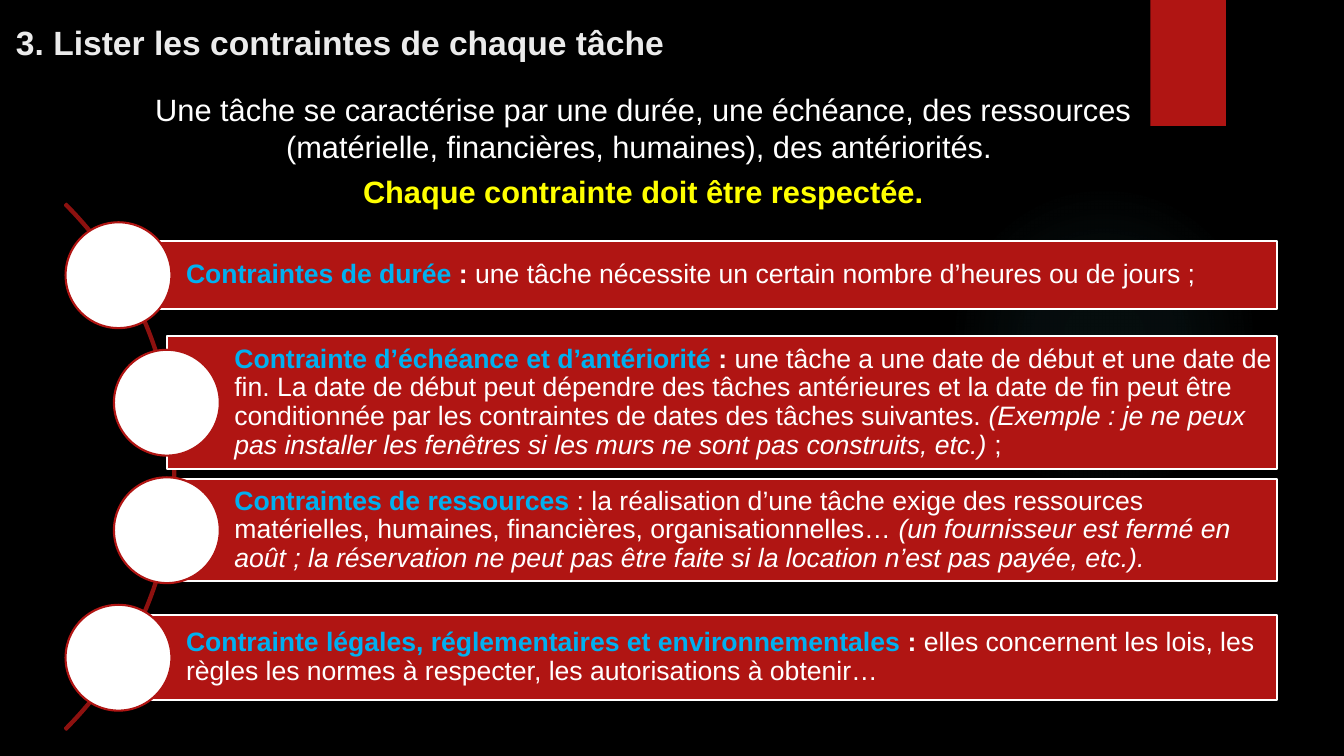
import pptx
import pptx.dml.color
import pptx.enum.shapes
import pptx.enum.text
import pptx.oxml
import pptx.oxml.ns
import pptx.util
from dataclasses import dataclass

Inches = pptx.util.Inches
SHAPE = pptx.enum.shapes.MSO_SHAPE
ANCHOR = pptx.enum.text.MSO_ANCHOR
ALIGN = pptx.enum.text.PP_ALIGN


@dataclass(frozen=True)
class Theme:
    background: str = "000000"
    red: str = "B01513"
    dark_red: str = "8D110F"
    white: str = "FFFFFF"
    title: str = "EBEBEB"
    yellow: str = "FFFF00"
    blue: str = "00B0F0"
    glow: str = "50B9C1"
    font: str = "Arial"
    title_size: int = 24
    intro_size: int = 22
    bar_size: int = 19
    line: float = 1.5


THEME = Theme()

CIRCLE = 1.05
FIRST_CENTER, CENTER_STEP = 2.73, 1.265
BAR_RIGHT = 12.67

# Circle left, bar height, then heading, colon, explanation, example, ending
CONSTRAINTS = [
    (0.65, 0.68, "Contraintes de durée ", ": ",
     "une tâche nécessite un certain nombre d’heures ou de jours ;", "", ""),
    (1.13, 1.32, "Contrainte d’échéance et d’antériorité ", ":",
     " une tâche a une date de début et une date de fin. La date de début peut "
     "dépendre des tâches antérieures et la date de fin peut être conditionnée "
     "par les contraintes de dates des tâches suivantes. ",
     "(Exemple : je ne peux pas installer les fenêtres si les murs ne sont pas "
     "construits, etc.)", " ;"),
    (1.13, 1.01, "Contraintes de ressources ", "",
     ": la réalisation d’une tâche exige des ressources matérielles, humaines, "
     "financières, organisationnelles… ",
     "(un fournisseur est fermé en août ; la réservation ne peut pas être faite "
     "si la location n’est pas payée, etc.).", ""),
    (0.65, 0.84, "Contrainte légales, réglementaires et environnementales ", ": ",
     "elles concernent les lois, les règles les normes à respecter, les "
     "autorisations à obtenir…", "", ""),
]


def rgb(color):
    return pptx.dml.color.RGBColor.from_string(color)


def add_run(p, text, size, color=THEME.white, bold=False, italic=False):
    r = p.add_run()
    r.text = text
    r.font.name = THEME.font
    r.font.size = pptx.util.Pt(size)
    r.font.bold = bold
    r.font.italic = italic
    r.font.color.rgb = rgb(color)


def add_shape(s, kind, left, top, width, height, fill=None, line=None):
    sp = s.shapes.add_shape(kind, Inches(left), Inches(top),
                            Inches(width), Inches(height))
    sp.shadow.inherit = False
    if fill:
        sp.fill.solid()
        sp.fill.fore_color.rgb = rgb(fill)
    else:
        sp.fill.background()
    if line:
        sp.line.color.rgb = rgb(line)
        sp.line.width = pptx.util.Pt(THEME.line)
    else:
        sp.line.fill.background()
    return sp


def add_text_box(s, left, top, width, height, anchor=ANCHOR.TOP):
    box = s.shapes.add_textbox(Inches(left), Inches(top),
                               Inches(width), Inches(height))
    tf = box.text_frame
    tf.word_wrap = True
    tf.vertical_anchor = anchor
    return tf


def add_glow(s):
    """Faint radial light that fades out towards its edge."""
    sp = add_shape(s, SHAPE.OVAL, 9.41, 1.83, 3.08, 3.08)
    stops = "".join(
        f'<a:gs pos="{pos}000"><a:srgbClr val="{THEME.glow}">'
        f'<a:alpha val="{alpha}000"/></a:srgbClr></a:gs>'
        for pos, alpha in [(0, 7), (36, 6), (69, 0)])
    gradient = pptx.oxml.parse_xml(
        f'<a:gradFill {pptx.oxml.ns.nsdecls("a")}><a:gsLst>{stops}</a:gsLst>'
        '<a:path path="circle"><a:fillToRect l="50000" t="50000" r="50000" '
        'b="50000"/></a:path></a:gradFill>')
    no_fill = sp.element.spPr.find(pptx.oxml.ns.qn("a:noFill"))
    sp.element.spPr.replace(no_fill, gradient)


def add_intro(s):
    tf = add_text_box(s, 0.82, 0.85, 11.12, 1.3)
    p = tf.paragraphs[0]
    p.alignment = ALIGN.CENTER
    add_run(p, "Une tâche se caractérise par une durée, une échéance, des "
               "ressources (matérielle, financières, humaines), des "
               "antériorités. ", THEME.intro_size)
    p = tf.add_paragraph()
    p.alignment = ALIGN.CENTER
    p.space_before = pptx.util.Pt(6)
    add_run(p, "Chaque contrainte doit être respectée.", THEME.intro_size,
            color=THEME.yellow, bold=True)


def add_arc(s):
    arc = add_shape(s, SHAPE.BLOCK_ARC, -5.64, 0.94, 7.38, 7.38,
                    line=THEME.dark_red)
    for i, value in enumerate([189, 27, 0.003]):
        arc.adjustments[i] = value


def add_constraint(s, center, left, height, heading, colon, body, example, ending):
    """Bar of text with a circle centred on its left edge."""
    bar_left = left + CIRCLE / 2
    bar = add_shape(s, SHAPE.RECTANGLE, bar_left, center - height / 2,
                    BAR_RIGHT - bar_left, height, THEME.red, THEME.white)
    tf = bar.text_frame
    tf.word_wrap = True
    tf.vertical_anchor = ANCHOR.MIDDLE
    tf.margin_left = Inches(0.67)
    tf.margin_top = tf.margin_right = tf.margin_bottom = Inches(0.05)
    p = tf.paragraphs[0]
    p.alignment = ALIGN.LEFT
    p.line_spacing = 0.9
    for text, style in [(heading, {"color": THEME.blue, "bold": True}),
                        (colon, {"bold": True}), (body, {}),
                        (example, {"italic": True}), (ending, {})]:
        if text:
            add_run(p, text, THEME.bar_size, **style)
    add_shape(s, SHAPE.OVAL, left, center - CIRCLE / 2, CIRCLE, CIRCLE,
              THEME.white, THEME.red)


def main():
    prs = pptx.Presentation()
    prs.slide_width, prs.slide_height = Inches(13.33), Inches(7.5)
    s = prs.slides.add_slide(prs.slide_layouts[6])
    s.background.fill.solid()
    s.background.fill.fore_color.rgb = rgb(THEME.background)

    add_glow(s)
    add_shape(s, SHAPE.RECTANGLE, 11.41, 0, 0.75, 1.25, THEME.red)
    title = add_text_box(s, 0.06, 0.21, 11.59, 0.46, ANCHOR.BOTTOM)
    add_run(title.paragraphs[0], "3. Lister les contraintes de chaque tâche",
            THEME.title_size, color=THEME.title, bold=True)
    add_intro(s)
    add_arc(s)
    for i, constraint in enumerate(CONSTRAINTS):
        add_constraint(s, FIRST_CENTER + i * CENTER_STEP, *constraint)

    prs.save("out.pptx")


if __name__ == "__main__":
    main()
